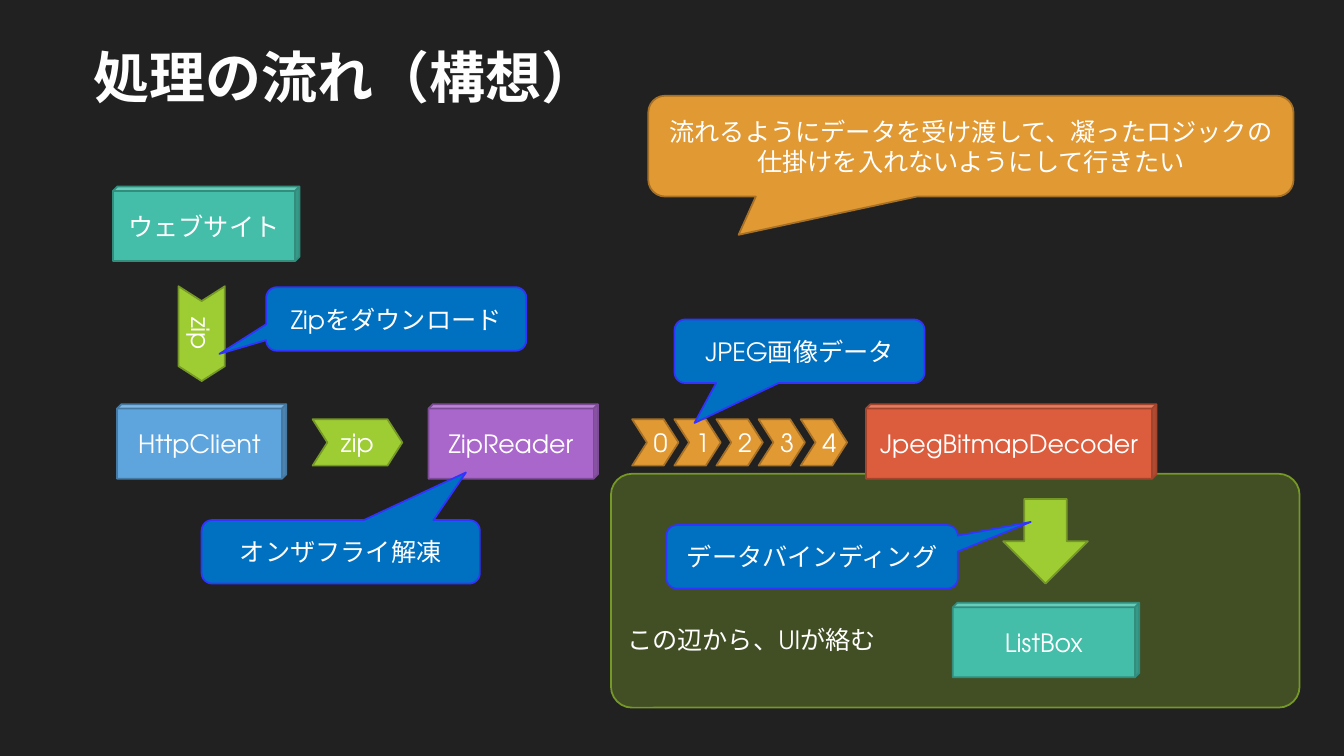
from dataclasses import dataclass

import lxml.etree
import pptx
import pptx.dml.color
import pptx.enum.shapes
import pptx.enum.text
import pptx.oxml
import pptx.oxml.ns
import pptx.util

SHAPE = pptx.enum.shapes.MSO_SHAPE
ALIGN = pptx.enum.text.PP_ALIGN
ANCHOR = pptx.enum.text.MSO_ANCHOR


@dataclass(frozen=True)
class Theme:
    font: str = "TeX Gyre Adventor"
    title_size: int = 40
    body_size: int = 18
    outline: float = 1.25
    background: str = "212121"
    title: str = "FEFEFE"
    text: str = "FFFFFF"
    # Each pair is a fill and its outline.
    teal: tuple = ("44BEA9", "328D7D")
    sky: tuple = ("5EA5DD", "467AA3")
    purple: tuple = ("A967CB", "7D4C96")
    red: tuple = ("DC5D3D", "A3452D")
    green: tuple = ("9ECD33", "759826")
    orange: tuple = ("E19933", "A67126")
    blue: tuple = ("0070C0", "3333FF")


theme = Theme()
rgb = pptx.dml.color.RGBColor.from_string

deck = pptx.Presentation()
deck.slide_width = pptx.util.Inches(13.33)
deck.slide_height = pptx.util.Inches(7.5)
CELL = deck.slide_height / 75  # square grid: 75 rows, 133.3 columns

page = deck.slides.add_slide(deck.slide_layouts[5])
page.background.fill.solid()
page.background.fill.fore_color.rgb = rgb(theme.background)


def write_text(shape, text, size=theme.body_size, color=theme.text, bold=False,
               align=ALIGN.CENTER, anchor=ANCHOR.MIDDLE):
    frame = shape.text_frame
    frame.word_wrap = True
    frame.auto_size = pptx.enum.text.MSO_AUTO_SIZE.NONE
    frame.vertical_anchor = anchor
    para = frame.paragraphs[0]
    para.alignment = align
    span = para.add_run()
    span.text = text
    span.font.name = theme.font
    span.font.size = pptx.util.Pt(size)
    span.font.bold = bold
    span.font.color.rgb = rgb(color)
    span.font.language_id = pptx.enum.lang.MSO_LANGUAGE_ID.JAPANESE
    return span


def add_box(kind, column, row, columns, rows, colors, adjustments=()):
    """Place a filled, outlined shape, measured in grid cells."""
    box = page.shapes.add_shape(
        kind, *(round(cells * CELL) for cells in (column, row, columns, rows)))
    box.shadow.inherit = False
    box.fill.solid()
    box.fill.fore_color.rgb = rgb(colors[0])
    box.line.color.rgb = rgb(colors[1])
    box.line.width = pptx.util.Pt(theme.outline)
    for index, value in enumerate(adjustments):
        box.adjustments[index] = value
    return box


# Title
title = page.shapes.title
title.left, title.top, title.width, title.height = (
    round(cells * CELL) for cells in (8.3, 0.8, 115.6, 10.6))
span = write_text(title, "処理の流れ（構想）", size=theme.title_size, color=theme.title,
                  bold=True, align=ALIGN.LEFT, anchor=ANCHOR.BOTTOM)
title_shadow = pptx.oxml.parse_xml(
    f'<a:effectLst {pptx.oxml.ns.nsdecls("a")}>'
    '<a:outerShdw blurRad="38100" dist="38100" dir="2700000" algn="tl">'
    '<a:srgbClr val="000000"><a:alpha val="43000"/></a:srgbClr>'
    '</a:outerShdw></a:effectLst>')
span.font._element.find(pptx.oxml.ns.qn("a:solidFill")).addnext(title_shadow)

# User interface area
panel = add_box(SHAPE.ROUNDED_RECTANGLE, 60.6, 47, 68.3, 23.2, theme.green, [0.09])
panel_color = panel._element.spPr.find(
    pptx.oxml.ns.qn("a:solidFill") + "/" + pptx.oxml.ns.qn("a:srgbClr"))
lxml.etree.SubElement(panel_color, pptx.oxml.ns.qn("a:alpha"), val="27000")
write_text(panel, "この辺から、UIが絡む", align=ALIGN.LEFT, anchor=ANCHOR.BOTTOM)
panel.text_frame.margin_bottom = round(4.7 * CELL)

# Components
for text, column, row, columns, colors in (
    ("ウェブサイト", 11.2, 18.5, 18.5, theme.teal),
    ("HttpClient", 11.6, 40.1, 16.8, theme.sky),
    ("ZipReader", 42.5, 40.1, 16.8, theme.purple),
    ("JpegBitmapDecoder", 85.9, 40.1, 28.8, theme.red),
    ("ListBox", 94.5, 59.8, 18.5, theme.teal),
):
    write_text(add_box(SHAPE.CUBE, column, row, columns, 7.4, colors, [0.06]), text)

# Data passed between components
packets = [
    ("zip", 15.3, 30.8, 9.4, theme.green, 90),
    ("zip", 31, 41.6, 8.9, theme.green, 0),
]
packets += [(str(number), 62.7 + 4.18 * number, 41.6, 4.6, theme.orange, 0)
            for number in range(5)]
for text, column, row, columns, colors, rotation in packets:
    packet = add_box(SHAPE.CHEVRON, column, row, columns, 4.6, colors, [0.32])
    packet.rotation = rotation
    write_text(packet, text)

add_box(SHAPE.DOWN_ARROW, 99.5, 49.5, 8.4, 8.4, theme.green)

# Callouts, with the tip as shares of the callout's size from its centre
for text, column, row, columns, rows, colors, tip in (
    ("Zipをダウンロード", 26.4, 28.5, 25.8, 6.3, theme.blue, (-0.68, 0.55)),
    ("オンザフライ解凍", 20, 51.6, 27.6, 6.3, theme.blue, (0.45, -1.25)),
    ("JPEG画像データ", 66.9, 31.7, 24.8, 6.3, theme.blue, (-0.42, 1.13)),
    ("データバインディング", 66.1, 52.1, 28.9, 6.3, theme.blue, (0.75, -0.55)),
    ("流れるようにデータを受け渡して、凝ったロジックの仕掛けを入れないようにして行きたい",
     64.3, 9.5, 64, 10, theme.orange, (-0.36, 0.88)),
):
    write_text(add_box(SHAPE.ROUNDED_RECTANGULAR_CALLOUT, column, row, columns, rows,
                       colors, tip), text)

deck.save("out.pptx")
